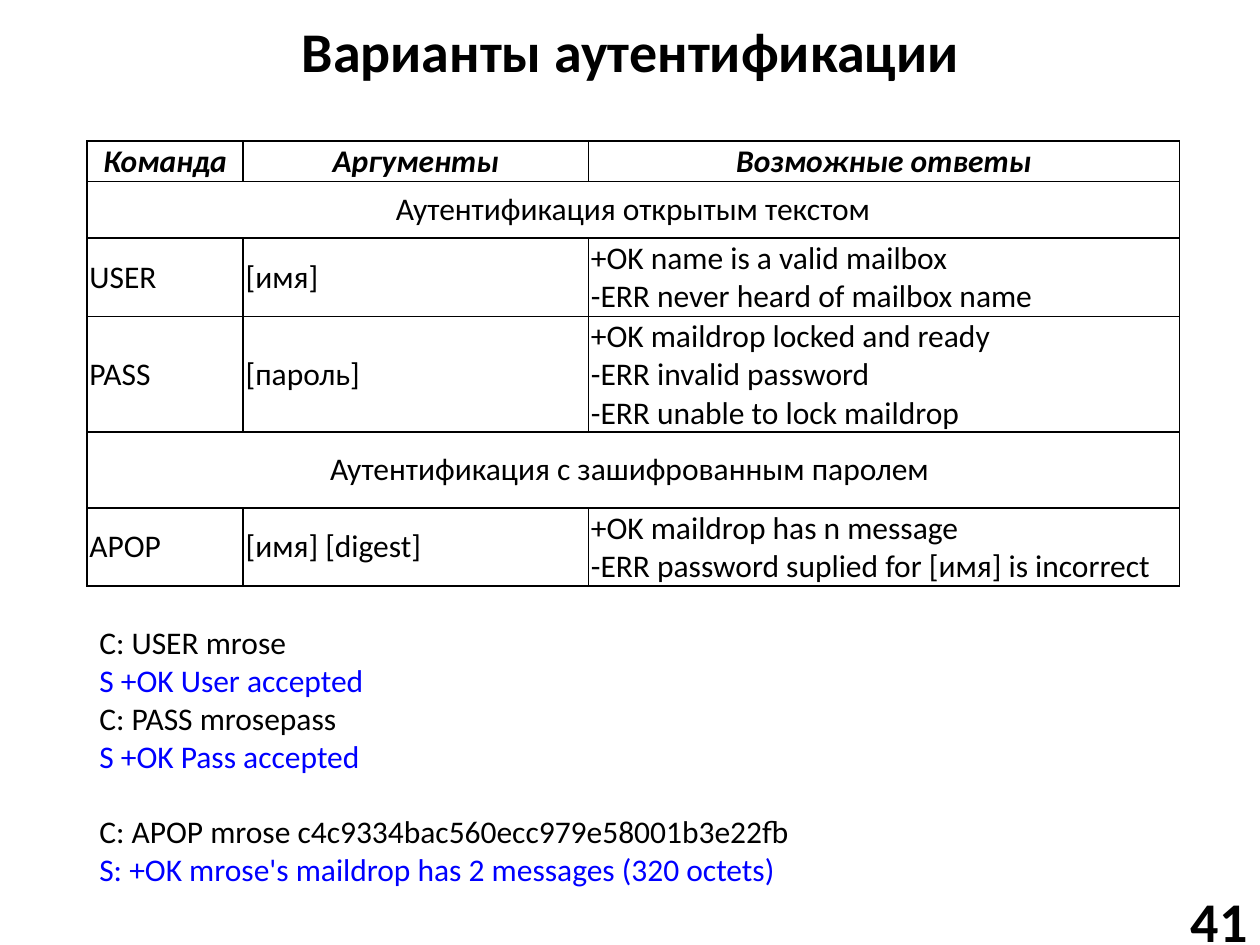
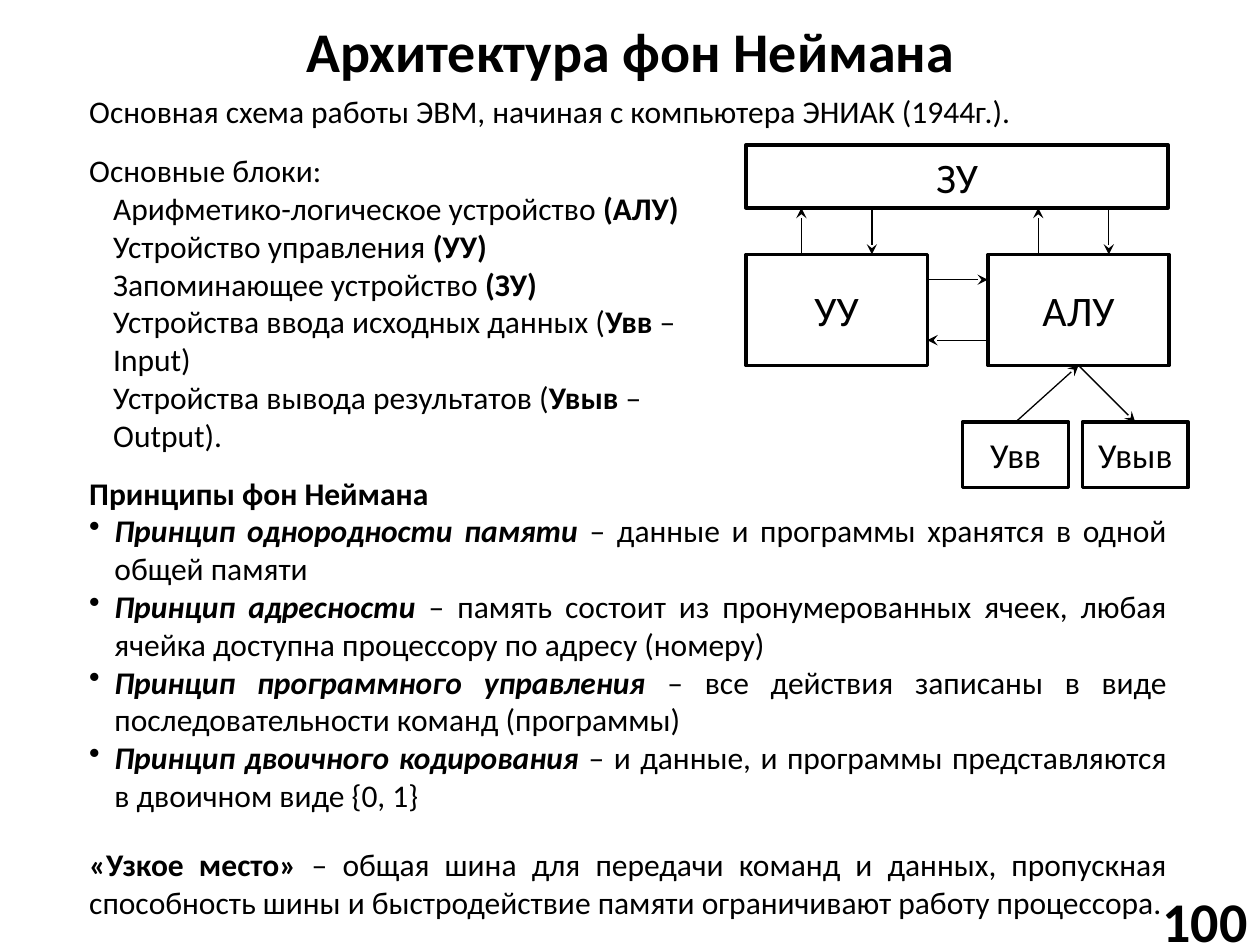
import dataclasses
import typing

import lxml.etree
import pptx
import pptx.dml.color
import pptx.enum.shapes
import pptx.enum.text
import pptx.oxml.ns
import pptx.util

Inches = pptx.util.Inches
Pt = pptx.util.Pt
Align = pptx.enum.text.PP_ALIGN
Anchor = pptx.enum.text.MSO_ANCHOR
qn = pptx.oxml.ns.qn

BLACK, WHITE, BLUE = "000000", "FFFFFF", "0000FF"
FACE = "Calibri"
LEFT, WIDE = 0.61, 8.75


class Run(typing.NamedTuple):
    text: str
    bold: bool = False
    italic: bool = False


@dataclasses.dataclass
class Line:
    """One paragraph: plain text or a list of runs, with its style."""
    text: str | list[Run]
    size: int = 18
    color: str = BLACK
    align: Align = Align.LEFT
    bold: bool = False
    italic: bool = False
    indent: float = 0
    bullet: bool = False


class Box(typing.NamedTuple):
    left: float
    top: float
    width: float
    height: float

    @property
    def right(self) -> float:
        return self.left + self.width

    @property
    def bottom(self) -> float:
        return self.top + self.height

    @property
    def middle(self) -> float:
        return self.left + self.width / 2

    def frame(self) -> list[int]:
        return [Inches(side) for side in self]


def tint(code: str) -> pptx.dml.color.RGBColor:
    return pptx.dml.color.RGBColor.from_string(code)


def write(body, lines: list[Line]) -> None:
    body.word_wrap = True
    for index, line in enumerate(lines):
        par = body.paragraphs[0] if index == 0 else body.add_paragraph()
        par.alignment = line.align
        font = par.font
        font.name, font.size = FACE, Pt(line.size)
        font.color.rgb = tint(line.color)
        if isinstance(line.text, str):
            font.bold, font.italic = line.bold, line.italic
            par.add_run().text = line.text
        else:
            for part in line.text:
                run = par.add_run()
                run.text = part.text
                run.font.bold, run.font.italic = part.bold, part.italic
        if line.indent:
            props = par._p.get_or_add_pPr()
            props.set("marL", str(Inches(line.indent)))
            if line.bullet:
                props.set("indent", str(-Inches(line.indent)))
                mark = lxml.etree.Element(qn("a:buChar"), char="•")
                props.insert(0, mark)


def add_text(slide, box: Box, lines: list[Line], anchor=Anchor.TOP) -> None:
    body = slide.shapes.add_textbox(*box.frame()).text_frame
    body.vertical_anchor = anchor
    write(body, lines)


def start(deck, title: str, number: int):
    """Add a blank slide with its title and page number."""
    slide = deck.slides.add_slide(deck.slide_layouts[6])
    add_text(slide, Box(0.28, 0.05, 9.45, 0.69),
             [Line(title, 32, align=Align.CENTER, bold=True)], Anchor.MIDDLE)
    add_text(slide, Box(8.86, 7.1, 1.14, 0.4),
             [Line(str(number), 32, align=Align.RIGHT, bold=True)], Anchor.MIDDLE)
    return slide


def outline(cell) -> None:
    """Give a table cell thin black borders, ahead of its fill."""
    props = cell._tc.get_or_add_tcPr()
    for index, side in enumerate(("a:lnL", "a:lnR", "a:lnT", "a:lnB")):
        edge = lxml.etree.Element(qn(side), w=str(Pt(1)))
        fill = lxml.etree.SubElement(edge, qn("a:solidFill"))
        lxml.etree.SubElement(fill, qn("a:srgbClr"), val=BLACK)
        props.insert(index, edge)


def add_grid(slide, box: Box, widths: list[float], heights: list[float],
             rows: list[list[str]]) -> None:
    """Draw a table; a row with a single text spans all columns."""
    frame = slide.shapes.add_table(len(rows), len(widths), *box.frame())
    table = frame.table
    for column, width in zip(table.columns, widths):
        column.width = Inches(width)
    for row, height in zip(table.rows, heights):
        row.height = Inches(height)
    frame.height = Inches(box.height)
    for index, texts in enumerate(rows):
        head, span = index == 0, len(texts) == 1
        align = Align.CENTER if head or span else Align.LEFT
        for cell in table.rows[index].cells:
            cell.fill.solid()
            cell.fill.fore_color.rgb = tint(WHITE)
            outline(cell)
            cell.vertical_anchor = Anchor.MIDDLE
            cell.margin_left = cell.margin_right = Inches(0.02)
            cell.margin_top = cell.margin_bottom = Inches(0.01)
        if span:
            table.cell(index, 0).merge(table.cell(index, len(widths) - 1))
        for column, text in enumerate(texts):
            write(table.cell(index, column).text_frame,
                  [Line(part, align=align, bold=head, italic=head)
                   for part in text.split("\n")])


def add_block(slide, box: Box, label: str, size: int) -> None:
    shape = slide.shapes.add_shape(
        pptx.enum.shapes.MSO_SHAPE.RECTANGLE, *box.frame())
    shape.shadow.inherit = False
    shape.fill.solid()
    shape.fill.fore_color.rgb = tint(WHITE)
    shape.line.color.rgb = tint(BLACK)
    shape.line.width = Pt(2)
    shape.text_frame.vertical_anchor = Anchor.MIDDLE
    write(shape.text_frame, [Line(label, size, align=Align.CENTER)])


def add_arrow(slide, x1: float, y1: float, x2: float, y2: float) -> None:
    arrow = slide.shapes.add_connector(
        pptx.enum.shapes.MSO_CONNECTOR.STRAIGHT,
        Inches(x1), Inches(y1), Inches(x2), Inches(y2))
    arrow.line.color.rgb = tint(BLACK)
    arrow.line.width = Pt(0.75)
    lxml.etree.SubElement(arrow.line._get_or_add_ln(), qn("a:tailEnd"),
                          type="stealth")
    lxml.etree.SubElement(arrow._element.spPr, qn("a:effectLst"))


def talk(slide, box: Box, lines: list[str]) -> None:
    """Write a dialogue: client lines in black, server lines in blue."""
    add_text(slide, box,
             [Line(text, color=BLUE if text.startswith("S") else BLACK)
              for text in lines], Anchor.MIDDLE)


def draw_login(deck) -> None:
    slide = start(deck, "Варианты аутентификации", 41)
    add_grid(slide, Box(0.69, 1.12, 8.67, 3.54), [1.24, 2.74, 4.69],
             [0.2, 0.45, 0.45, 0.6, 0.6, 0.6], [
        ["Команда", "Аргументы", "Возможные ответы"],
        ["Аутентификация открытым текстом"],
        ["USER", "[имя]",
         "+OK name is a valid mailbox\n-ERR never heard of mailbox name"],
        ["PASS", "[пароль]",
         "+OK maildrop locked and ready\n-ERR invalid password\n"
         "-ERR unable to lock maildrop"],
        ["Аутентификация с зашифрованным паролем "],
        ["APOP", "[имя] [digest]",
         "+OK maildrop has n message\n"
         "-ERR password suplied for [имя] is incorrect"],
    ])
    talk(slide, Box(0.69, 4.89, 8.7, 1.31), [
        "C: USER mrose", "S +OK User accepted",
        "C: PASS mrosepass", "S +OK Pass accepted"])
    talk(slide, Box(0.69, 6.39, 8.67, 0.71), [
        "C: APOP mrose c4c9334bac560ecc979e58001b3e22fb",
        "S: +OK mrose's maildrop has 2 messages (320 octets)"])


def draw_scheme(slide) -> None:
    store = Box(5.92, 1.15, 3.35, 0.5)
    control = Box(5.92, 2.02, 1.44, 0.88)
    logic = control._replace(left=7.84)
    enter = Box(7.64, 3.35, 0.84, 0.52)
    leave = enter._replace(left=8.59)
    for box, label, size in ((store, "ЗУ", 24), (control, "УУ", 24),
                             (logic, "АЛУ", 24), (enter, "Увв", 20),
                             (leave, "Увыв", 20)):
        add_block(slide, box, label, size)
    for unit, up, down in ((control, 0.44, 1.0), (logic, 0.4, 0.96)):
        add_arrow(slide, unit.left + up, unit.top, unit.left + up, store.bottom)
        add_arrow(slide, unit.left + down, store.bottom,
                  unit.left + down, unit.top)
    add_arrow(slide, control.right, 2.22, logic.left, 2.22)
    add_arrow(slide, logic.left, 2.7, control.right, 2.7)
    add_arrow(slide, enter.middle, enter.top, logic.middle, logic.bottom)
    add_arrow(slide, logic.middle, logic.bottom, leave.middle, leave.top)


def draw_neumann(deck) -> None:
    slide = start(deck, "Архитектура фон Неймана", 100)
    add_text(slide, Box(LEFT, 0.68, WIDE, 0.4), [Line(
        "Основная схема работы ЭВМ, начиная с компьютера ЭНИАК (1944г.).",
        align=Align.JUSTIFY)])
    units = [
        ("Арифметико-логическое устройство ", "(АЛУ)", ""),
        ("Устройство управления ", "(УУ)", ""),
        ("Запоминающее устройство ", "(ЗУ)", ""),
        ("Устройства ввода исходных данных (", "Увв", " – Input)"),
        ("Устройства вывода результатов (", "Увыв", " – Output)."),
    ]
    add_text(slide, Box(LEFT, 1.15, 5.19, 2.52), [Line("Основные блоки:")] + [
        Line([Run(text, bold=text == short) for text in (name, short, rest)
              if text], indent=0.19)
        for name, short, rest in units])
    rules = [
        ("однородности памяти",
         "данные и программы хранятся в одной общей памяти"),
        ("адресности", "память состоит из пронумерованных ячеек, "
         "любая ячейка доступна процессору по адресу (номеру)"),
        ("программного управления",
         "все действия записаны в виде последовательности команд (программы)"),
        ("двоичного кодирования",
         "и данные, и программы представляются в двоичном виде {0, 1}"),
    ]
    heading = Line("Принципы фон Неймана", align=Align.JUSTIFY, bold=True)
    add_text(slide, Box(LEFT, 3.71, WIDE, 2.83), [heading] + [
        Line([Run(f"Принцип {name} ", True, True), Run(f"– {text}")],
             align=Align.JUSTIFY, indent=0.2, bullet=True)
        for name, text in rules])
    add_text(slide, Box(LEFT, 6.66, WIDE, 0.71), [Line([
        Run("«Узкое место» ", True),
        Run("– общая шина для передачи команд и данных, пропускная "
            "способность шины и быстродействие памяти ограничивают "
            "работу процессора.")], align=Align.JUSTIFY)])
    draw_scheme(slide)


def main() -> None:
    deck = pptx.Presentation()
    deck.slide_width, deck.slide_height = Inches(10), Inches(7.5)
    draw_login(deck)
    draw_neumann(deck)
    deck.save("out.pptx")


if __name__ == "__main__":
    main()
